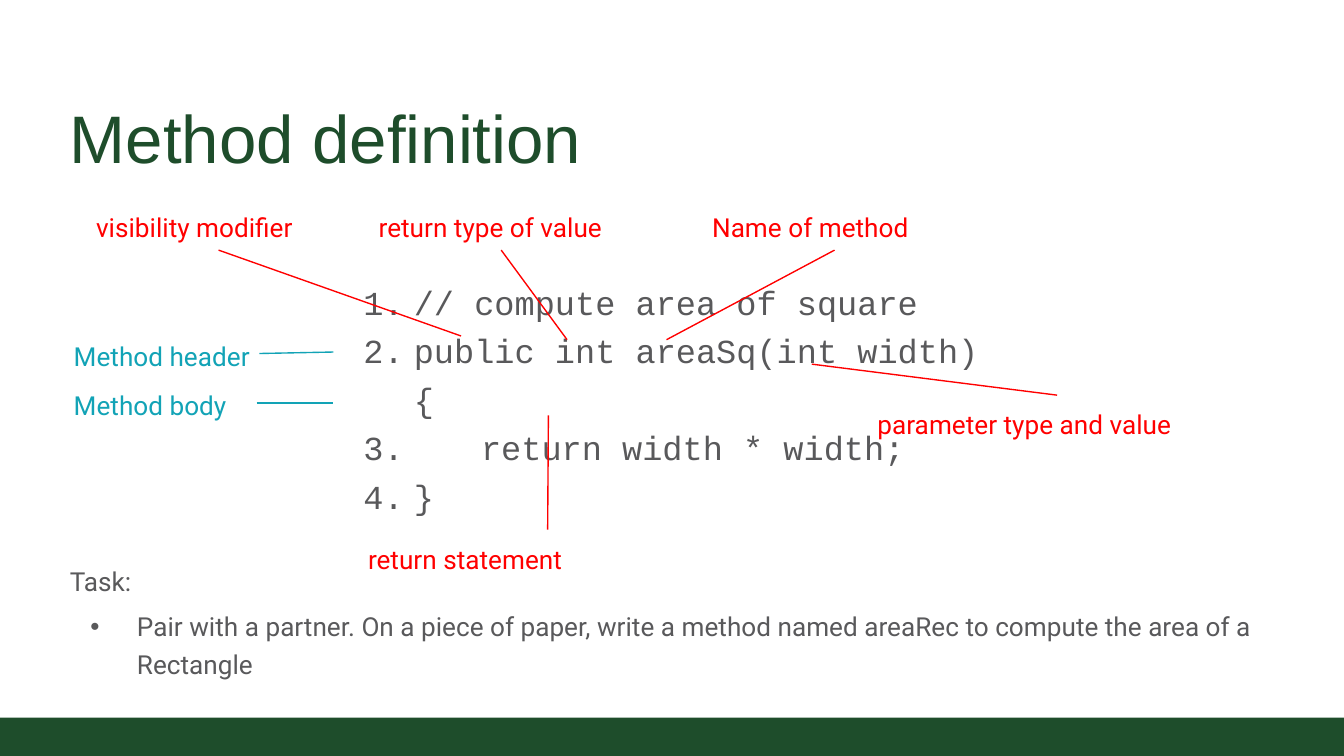
from lxml import etree
from pptx import Presentation
from pptx.dml.color import RGBColor
from pptx.enum import shapes, text
from pptx.oxml.ns import qn
from pptx.util import Pt

GREEN = RGBColor(0x1E, 0x4D, 0x2B)
GREY = RGBColor(0x59, 0x59, 0x5B)
RED = RGBColor(0xFF, 0x00, 0x00)
TEAL = RGBColor(0x12, 0xA3, 0xB6)

LABEL_H = 28
TOP, BOTTOM = 0, 2

# text, left, top, width, side the pointer leaves from, pointer tip
CALLOUTS = [
    ("visibility modifier", 12, 0, 145.4, BOTTOM, (214.6, 74)),
    ("return type of value", 163.4, 0, 145.4, BOTTOM, (271.4, 76)),
    ("Name of method", 342, 0, 145.4, BOTTOM, (324.7, 76)),
    ("parameter type and value", 430.6, 105.7, 206.6, TOP, (402.5, 89.1)),
    ("return statement", 157.7, 177.7, 206.6, TOP, (261.4, 116.5)),
]
# text, top, start and end of the rule beside it
PARTS = [
    ("Method header", 69, (106.6, 83.4), (146.2, 82.6)),
    ("Method body", 95.6, (105.1, 110), (146.2, 110)),
]
CODE = [
    "// compute area of square",
    "public int areaSq(int width) {",
    "\treturn width * width;",
    "}",
]


def add_text_box(s, box, inset, anchor=text.MSO_ANCHOR.TOP):
    sp = s.shapes.add_textbox(*map(Pt, box))
    tf = sp.text_frame
    tf.word_wrap = True
    tf.vertical_anchor = anchor
    tf.margin_left = tf.margin_right = Pt(inset)
    tf.margin_top = tf.margin_bottom = Pt(inset)
    return sp


def add_run(p, words, font, size, color):
    r = p.add_run()
    r.text = words
    r.font.name = font
    r.font.size = Pt(size)
    r.font.color.rgb = color


def next_paragraph(tf):
    """Return the empty first paragraph, or a new one once that is used."""
    first = tf.paragraphs[0]
    return tf.add_paragraph() if first.runs else first


def set_bullet(p, hanging, font, tag, **attributes):
    pPr = p._p.get_or_add_pPr()
    pPr.set("marL", str(Pt(36)))
    pPr.set("indent", str(-Pt(hanging)))
    color = etree.SubElement(pPr, qn("a:buClr"))
    etree.SubElement(color, qn("a:srgbClr"), val=str(GREY))
    etree.SubElement(pPr, qn("a:buFont"), typeface=font)
    etree.SubElement(pPr, qn(tag), **attributes)


def add_line(s, start, end, color):
    cx = s.shapes.add_connector(
        shapes.MSO_CONNECTOR.STRAIGHT, *map(Pt, (*start, *end)))
    cx.line.color.rgb = color
    cx.line.width = Pt(0.75)
    etree.SubElement(cx._element.spPr, qn("a:effectLst"))
    return cx


def add_label(s, words, box, color):
    sp = add_text_box(s, box, 7.2)
    add_run(sp.text_frame.paragraphs[0], words, "Roboto", 14, color)
    return sp


def add_footer_bar(s, box):
    sp = s.shapes.add_shape(shapes.MSO_SHAPE.RECTANGLE, *map(Pt, box))
    sp.shadow.inherit = False
    sp.fill.solid()
    sp.fill.fore_color.rgb = GREEN
    sp.line.fill.background()


def add_title(s, box):
    sp = add_text_box(s, box, 5, text.MSO_ANCHOR.BOTTOM)
    add_run(sp.text_frame.paragraphs[0], "Method definition", "Arial", 36, GREEN)


def add_code(s, box):
    tf = add_text_box(s, box, 5).text_frame
    for line in CODE:
        p = next_paragraph(tf)
        set_bullet(p, 27, "Courier New", "a:buAutoNum", type="arabicPeriod")
        p.line_spacing = 1.2
        add_run(p, line, "Courier New", 18, GREY)


def add_diagram(s, box):
    """Place the code with its red callouts and teal part names."""
    left, top, width, height = box

    def at(point):
        return left + point[0], top + point[1]

    add_code(s, (*at((148.3, 35.8)), 368.6, 134.6))
    for words, x, y, w, side, tip in CALLOUTS:
        label = add_label(s, words, (*at((x, y)), w, LABEL_H), RED)
        start = x + w / 2, y + (LABEL_H if side == BOTTOM else 0)
        add_line(s, at(start), at(tip), RED).begin_connect(label, side)
    for words, y, start, end in PARTS:
        add_label(s, words, (*at((0, y)), 145.4, LABEL_H), TEAL)
        add_line(s, at(start), at(end), TEAL)


def add_task(s, box):
    tf = add_text_box(s, box, 5).text_frame
    p = next_paragraph(tf)
    p.line_spacing = 1.2
    add_run(p, "Task:", "Roboto", 14, GREY)
    p = next_paragraph(tf)
    set_bullet(p, 25, "Arial", "a:buChar", char="•")
    p.line_spacing = 1.2
    p.space_before = Pt(4)
    add_run(p, "Pair with a partner. On a piece of paper, write a method named "
               "areaRec to compute the area of a Rectangle", "Roboto", 14, GREY)


def main():
    prs = Presentation()
    prs.slide_width, prs.slide_height = Pt(720), Pt(405)
    s = prs.slides.add_slide(prs.slide_layouts[6])
    add_footer_bar(s, (0, 384.5, 721.5, 20.5))
    add_title(s, (32.4, 47.5, 654.5, 52.5))
    add_diagram(s, (32.4, 106, 637.2, 205.7))
    add_task(s, (32.4, 294.5, 654.5, 83))
    prs.save("out.pptx")


if __name__ == "__main__":
    main()
